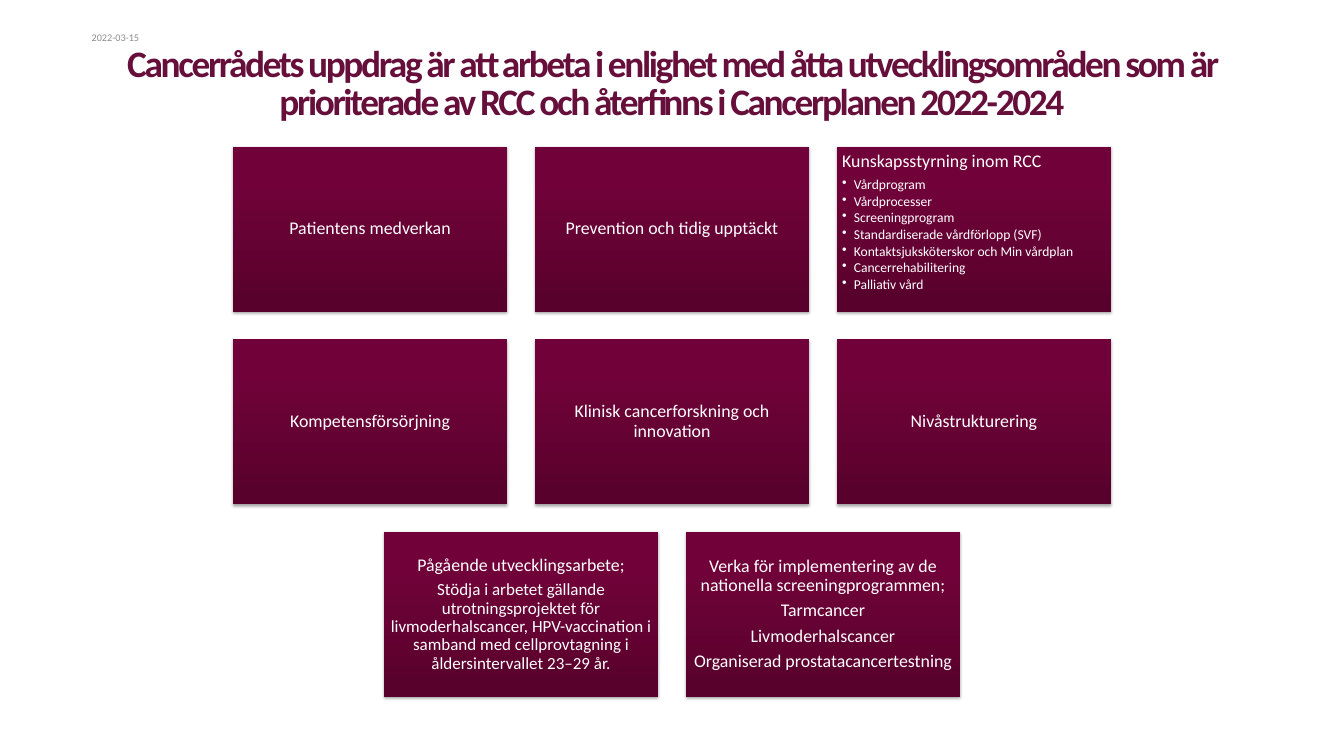
import pptx
import pptx.util
import pptx.dml.color
import pptx.enum.shapes
import pptx.enum.text
import pptx.oxml
import pptx.oxml.ns
from dataclasses import dataclass
from typing import Any

Inches, Pt = pptx.util.Inches, pptx.util.Pt
ALIGN = pptx.enum.text.PP_ALIGN
ANCHOR = pptx.enum.text.MSO_ANCHOR
FIT = pptx.enum.text.MSO_AUTO_SIZE
NS = pptx.oxml.ns.nsdecls("a")

WIDE, HIGH = 21.99, 12.37
BOX_W, BOX_H, GAP, TOP = 4.49, 2.7, 0.45, 2.4
STOPS = [(0, "57012C"), (80, "710239"), (100, "730039")]


@dataclass
class Line:
    text: str
    size: float = 21
    bullet: bool = False


@dataclass
class Card:
    lines: list[Line]
    list_style: bool = False


def plain(*texts: str) -> Card:
    return Card([Line(text) for text in texts])


AREAS = [
    "Vårdprogram",
    "Vårdprocesser",
    "Screeningprogram",
    "Standardiserade vårdförlopp (SVF)",
    "Kontaktsjuksköterskor och Min vårdplan",
    "Cancerrehabilitering",
    "Palliativ vård",
]

ROWS = [
    [
        plain("Patientens medverkan"),
        plain("Prevention och tidig upptäckt"),
        Card([Line("Kunskapsstyrning inom RCC")] + [Line(area, 16, True) for area in AREAS], True),
    ],
    [
        plain("Kompetensförsörjning"),
        plain("Klinisk cancerforskning och innovation"),
        plain("Nivåstrukturering"),
    ],
    [
        Card([
            Line("Pågående utvecklingsarbete;"),
            Line("Stödja i arbetet gällande utrotningsprojektet för livmoderhalscancer, "
                 "HPV-vaccination i samband med cellprovtagning i åldersintervallet 23–29 år.", 20),
        ]),
        plain(
            "Verka för implementering av de nationella screeningprogrammen;",
            "Tarmcancer",
            "Livmoderhalscancer",
            "Organiserad prostatacancertestning",
        ),
    ],
]


def color(code: str) -> pptx.dml.color.RGBColor:
    return pptx.dml.color.RGBColor.from_string(code)


def write(par: Any, text: str, *, size: float, tint: str, align: Any = ALIGN.LEFT,
          bold: bool = False, lead: float = 1.0, after: float = 0, track: float = 0,
          bullet: bool = False) -> None:
    par.alignment = align
    par.line_spacing = lead
    par.space_after = Pt(after)
    if bullet:
        par.level = 1
        props = par._p.get_or_add_pPr()
        props.set("marL", str(Inches(0.19)))
        props.set("indent", str(Inches(-0.19)))
        props.append(pptx.oxml.parse_xml(f'<a:buChar {NS} char="•"/>'))
    run = par.add_run()
    run.text = text
    font = run.font
    font.name, font.size, font.bold = "Calibri", Pt(size), bold
    font.color.rgb = color(tint)
    if track:
        run._r.get_or_add_rPr().set("spc", str(round(track * 100)))


def inset(frame: Any, side: float, base: float) -> None:
    frame.margin_left = frame.margin_right = frame.margin_top = Inches(side)
    frame.margin_bottom = Inches(base)


def shade(shape: Any) -> None:
    """Gradient fill from the bottom up, with a soft shadow below."""
    stops = "".join(f'<a:gs pos="{pos * 1000}"><a:srgbClr val="{code}"/></a:gs>'
                    for pos, code in STOPS)
    fill = (f'<a:gradFill {NS} rotWithShape="1"><a:gsLst>{stops}</a:gsLst>'
            '<a:lin ang="16200000" scaled="0"/></a:gradFill>')
    glow = (f'<a:effectLst {NS}><a:outerShdw blurRad="{Pt(3.1)}" dist="{Pt(1.8)}" dir="5400000" '
            'rotWithShape="0"><a:srgbClr val="000000"><a:alpha val="35000"/></a:srgbClr>'
            '</a:outerShdw></a:effectLst>')
    props = shape._element.spPr
    props.append(pptx.oxml.parse_xml(fill))
    shape.line.fill.background()
    props.append(pptx.oxml.parse_xml(glow))


def draw(slide: Any, card: Card, left: float, top: float) -> None:
    shape = slide.shapes.add_shape(pptx.enum.shapes.MSO_SHAPE.RECTANGLE, Inches(left), Inches(top),
                                   Inches(BOX_W), Inches(BOX_H))
    shade(shape)
    frame = shape.text_frame
    frame.word_wrap = True
    inset(frame, 0.09, 0.09)
    frame.vertical_anchor = ANCHOR.TOP if card.list_style else ANCHOR.MIDDLE
    align = ALIGN.LEFT if card.list_style else ALIGN.CENTER
    for num, line in enumerate(card.lines):
        par = frame.add_paragraph() if num else frame.paragraphs[0]
        after = line.size * (0.15 if line.bullet else 0.35)
        write(par, line.text, size=line.size, tint="FFFFFF", align=align, lead=0.9,
              after=after, bullet=line.bullet)


def main() -> None:
    deck = pptx.Presentation()
    deck.slide_width, deck.slide_height = Inches(WIDE), Inches(HIGH)
    slide = deck.slides.add_slide(deck.slide_layouts[5])

    # Date
    date = slide.shapes.add_textbox(Inches(1.5), Inches(0.52), Inches(0.87), Inches(0.2)).text_frame
    inset(date, 0, 0)
    date.word_wrap = False
    date.auto_size = FIT.SHAPE_TO_FIT_TEXT
    write(date.paragraphs[0], "2022-03-15", size=12, tint="8C8C8C")

    # Title
    title = slide.shapes.title
    title.left, title.top = Inches(1.36), Inches(0.52)
    title.width, title.height = Inches(19.27), Inches(1.58)
    frame = title.text_frame
    frame.word_wrap, frame.auto_size = True, FIT.NONE
    frame.vertical_anchor = ANCHOR.BOTTOM
    inset(frame, 0, 0.08)
    write(frame.paragraphs[0],
          "Cancerrådets uppdrag är att arbeta i enlighet med åtta utvecklingsområden som är "
          "prioriterade av RCC och återfinns i Cancerplanen 2022-2024",
          size=44, tint="670F3B", align=ALIGN.CENTER, bold=True, lead=0.85, track=-2.8)

    # Cards, each row centred on the slide
    for row, cards in enumerate(ROWS):
        span = len(cards) * (BOX_W + GAP) - GAP
        for col, card in enumerate(cards):
            draw(slide, card, (WIDE - span) / 2 + col * (BOX_W + GAP), TOP + row * (BOX_H + GAP))

    deck.save("out.pptx")


if __name__ == "__main__":
    main()
